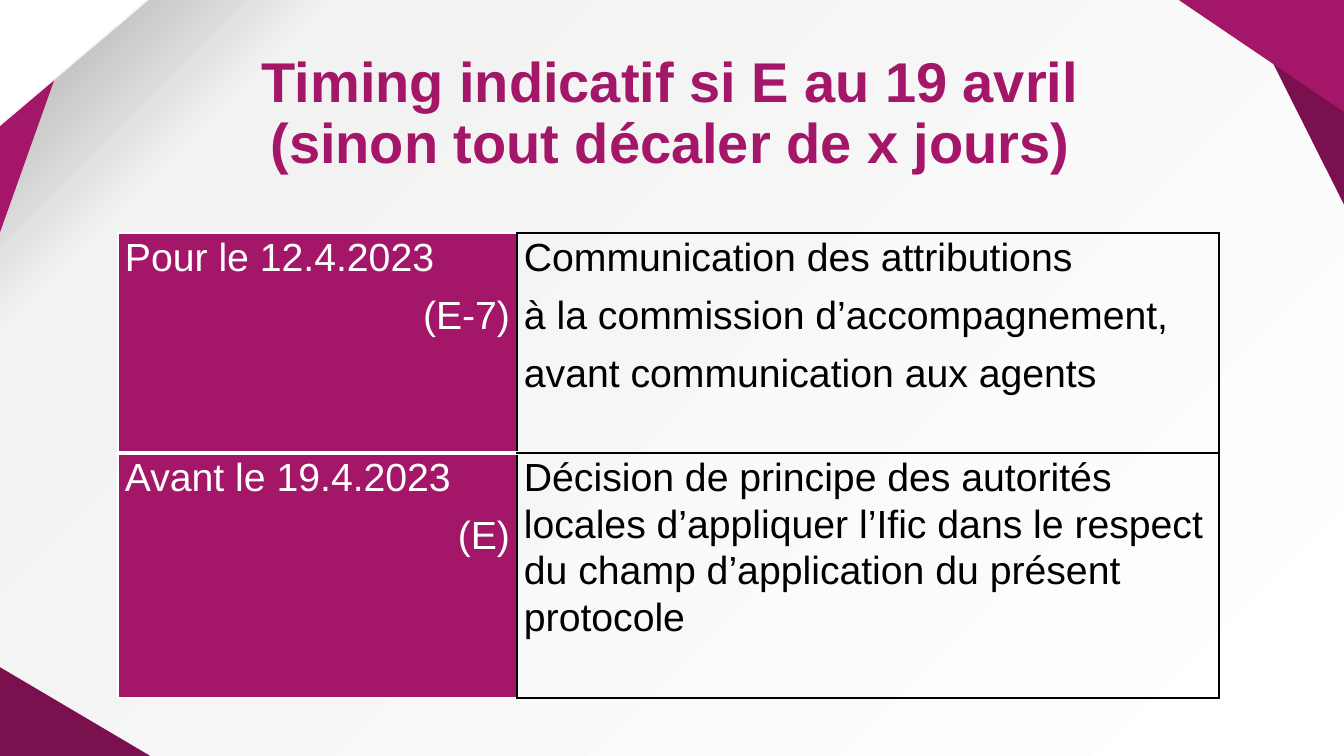
"""Builds the slide with the indicative schedule table."""
from copy import deepcopy

from lxml import etree
from pptx import Presentation
from pptx import util as u
from pptx.dml.color import RGBColor
from pptx.enum import shapes, text
from pptx.oxml.ns import qn

EMU_PER_PX = 914400 / 100.8
FONT = "Arial"
COLORS = {
    "magenta": "A31668",
    "plum": "7A114E",
    "white": "FFFFFF",
    "pale": "F2F2F2",
    "grey": "A6A6A6",
    "black": "000000",
}
CORNERS = [
    (-1, 0, 83, 233, 90, "magenta", "magenta"),
    (0, 668, 149, 88, 0, "plum", "plum"),
    (-1, -1, 150, 127, 90, "white", "pale"),
    (1242, 0, 103, 205, 180, "plum", "plum"),
    (1180, 0, 164, 111, 180, "magenta", "magenta"),
]
SCHEDULE = [
    (
        ["Pour le 12.4.2023", "(E-7)"],
        [
            "Communication des attributions",
            "à la commission d’accompagnement,",
            "avant communication aux agents",
        ],
    ),
    (
        ["Avant le 19.4.2023", "(E)"],
        [
            "Décision de principe des autorités locales d’appliquer l’Ific "
            "dans le respect du champ d’application du présent protocole",
        ],
    ),
]
COLUMN_WIDTHS = [399, 702]
ROW_HEIGHTS = [220, 245]


def px(length):
    """Turns px into EMU."""
    return u.Emu(round(length * EMU_PER_PX))


def rgb(name):
    """Looks up a named colour."""
    return RGBColor.from_string(COLORS[name])


def paint_background(slide):
    """Shades the background diagonally from grey to white."""
    fill = slide.background.fill
    fill.gradient()
    fill.gradient_angle = 315
    first_stop = next(slide.element.iter(qn("a:gs")))
    first_stop.addnext(deepcopy(first_stop))
    shades = [(0, "grey"), (0.16, "pale"), (1, "white")]
    for stop, (position, shade) in zip(fill.gradient_stops, shades):
        stop.position = position
        stop.color.rgb = rgb(shade)


def add_corner(slide, left, top, width, height, turn, fill, edge):
    """Adds a right triangle that covers the given box once turned."""
    across, down = (height, width) if turn == 90 else (width, height)
    corner = slide.shapes.add_shape(
        shapes.MSO_SHAPE.RIGHT_TRIANGLE,
        px(left + (width - across) / 2), px(top + (height - down) / 2),
        px(across), px(down),
    )
    corner.rotation = turn
    corner.shadow.inherit = False
    corner.fill.solid()
    corner.fill.fore_color.rgb = rgb(fill)
    corner.line.color.rgb = rgb(edge)
    corner.line.width = u.Pt(1)


def style_font(paragraph, size, color, bold=False):
    """Sets the font of a paragraph."""
    paragraph.font.name = FONT
    paragraph.font.size = u.Pt(size)
    paragraph.font.bold = bold
    paragraph.font.color.rgb = rgb(color)


def add_title(slide, wording):
    """Adds the centred title."""
    frame = slide.shapes.add_textbox(px(102), px(42), px(1136), px(146)).text_frame
    frame.word_wrap = True
    frame.vertical_anchor = text.MSO_ANCHOR.MIDDLE
    heading = frame.paragraphs[0]
    heading.text = wording
    heading.alignment = text.PP_ALIGN.CENTER
    heading.line_spacing = 0.9
    style_font(heading, 40, "magenta", bold=True)


def set_borders(cell, left, right, top, bottom):
    """Draws the four borders of a cell, each a colour and a width in points."""
    properties = cell._tc.get_or_add_tcPr()
    sides = zip(("lnL", "lnR", "lnT", "lnB"), (left, right, top, bottom))
    for index, (side, (color, points)) in enumerate(sides):
        border = etree.Element(qn(f"a:{side}"), w=str(u.Pt(points)))
        solid = etree.SubElement(border, qn("a:solidFill"))
        etree.SubElement(solid, qn("a:srgbClr"), val=COLORS[color])
        properties.insert(index, border)


def fill_cell(cell, lines, color):
    """Writes the lines of a cell."""
    cell.margin_left = cell.margin_right = px(7)
    cell.margin_top = cell.margin_bottom = 0
    cell.text = "\n".join(lines)
    for paragraph in cell.text_frame.paragraphs:
        paragraph.line_spacing = 1.07
        paragraph.space_after = u.Pt(8)
        style_font(paragraph, 28, color)


def add_schedule(slide):
    """Adds the table of deadlines and steps."""
    schedule = slide.shapes.add_table(
        len(SCHEDULE), 2, px(118), px(233), px(sum(COLUMN_WIDTHS)), px(sum(ROW_HEIGHTS))
    ).table
    schedule.first_row = schedule.horz_banding = False
    for column, width in zip(schedule.columns, COLUMN_WIDTHS):
        column.width = px(width)
    thin_black, thin_white = ("black", 1), ("white", 1)
    for index, (deadline, step) in enumerate(SCHEDULE):
        schedule.rows[index].height = px(ROW_HEIGHTS[index])
        date_cell, step_cell = schedule.cell(index, 0), schedule.cell(index, 1)
        fill_cell(date_cell, deadline, "white")
        date_cell.text_frame.paragraphs[1].alignment = text.PP_ALIGN.RIGHT
        date_cell.fill.solid()
        date_cell.fill.fore_color.rgb = rgb("magenta")
        is_last = index == len(SCHEDULE) - 1
        below = thin_white if is_last else ("white", 3)
        set_borders(date_cell, thin_white, thin_black, thin_white, below)
        fill_cell(step_cell, step, "black")
        step_cell.fill.background()
        set_borders(step_cell, *[thin_black] * 4)


def main():
    """Builds and saves the slide."""
    deck = Presentation()
    deck.slide_width, deck.slide_height = px(1344), px(756)
    slide = deck.slides.add_slide(deck.slide_layouts[6])
    paint_background(slide)
    for corner in CORNERS:
        add_corner(slide, *corner)
    add_title(slide, "Timing indicatif si E au 19 avril\v(sinon tout décaler de x jours)")
    add_schedule(slide)
    deck.save("out.pptx")


if __name__ == "__main__":
    main()
